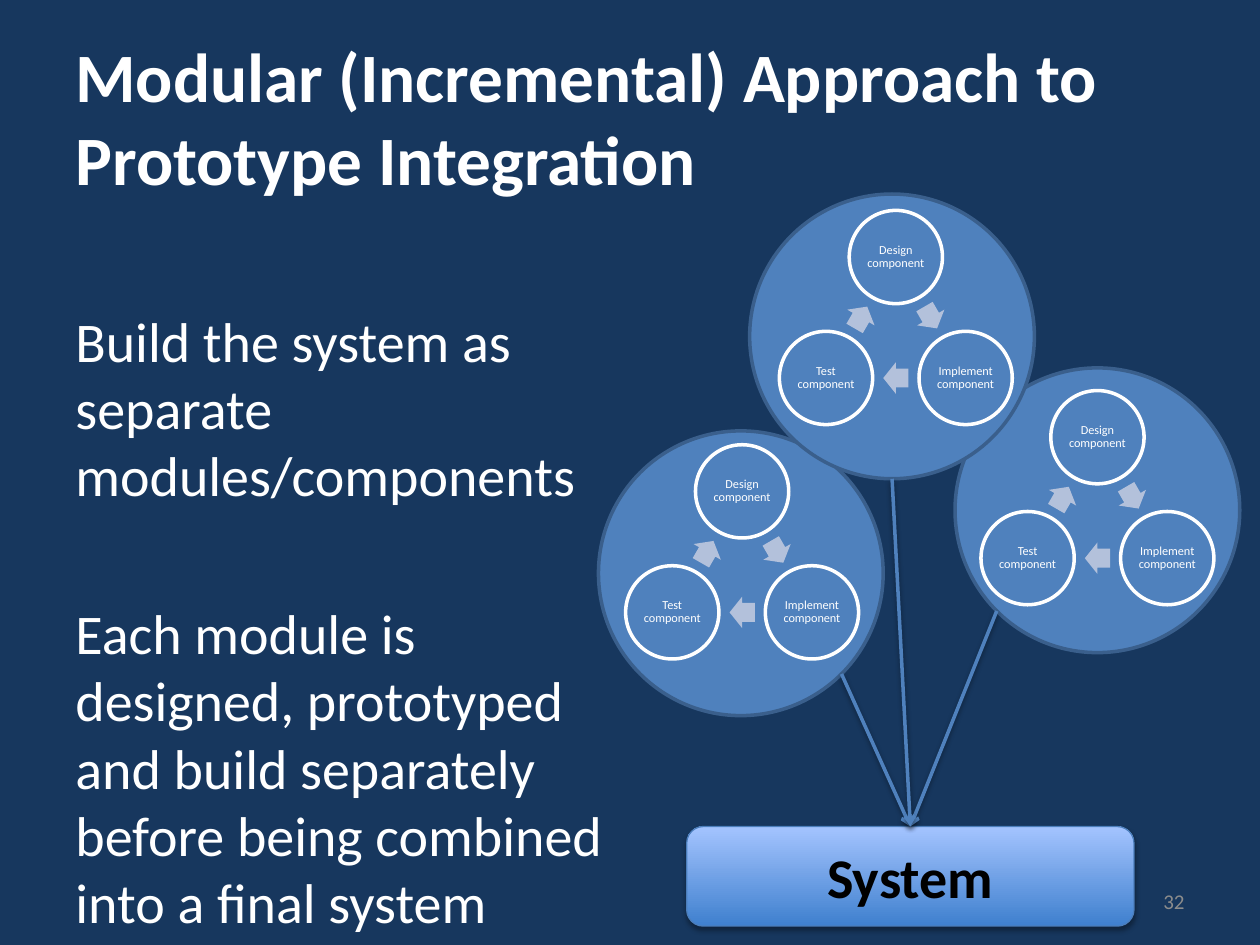
from math import cos, sin, radians
from lxml.etree import SubElement
from pptx import Presentation
from pptx.dml.color import RGBColor
from pptx.enum.shapes import MSO_CONNECTOR, MSO_SHAPE
from pptx.enum.text import MSO_ANCHOR, PP_ALIGN
from pptx.oxml.ns import qn
from pptx.util import Inches, Pt

TITLE = "Modular (Incremental) Approach to Prototype Integration"
BODY = [
    "Build the system as separate modules/components",
    "Each module is designed, prototyped and build separately before being combined into a final system",
]
STEPS = ["Design component", "Implement component", "Test component"]
MODULES = [
    {"center": (5.88, 4.55), "cycle": (5.89, 4.54), "exit": 45},
    {"center": (8.71, 4.05), "cycle": (8.71, 4.11), "exit": 135},
    {"center": (7.08, 2.67), "cycle": (7.11, 2.68), "exit": 90},
]
MODULE_SIZE, STEP_SIZE, CYCLE_RADIUS = 2.26, 0.74, 0.64
BLUE, WHITE = "4F81BD", "FFFFFF"


def color(value):
    return RGBColor.from_string(value)


def polar(center, radius, angle):
    x, y = center
    return x + radius * cos(radians(angle)), y + radius * sin(radians(angle))


def write(box, text, size, fill=WHITE, bold=False, align=PP_ALIGN.LEFT,
          anchor=MSO_ANCHOR.MIDDLE, inset=None, top=None, gap=0, spacing=None):
    frame = box.text_frame
    frame.word_wrap = True
    frame.vertical_anchor = anchor
    if inset is not None:
        frame.margin_left = frame.margin_right = Inches(inset)
        frame.margin_top = frame.margin_bottom = Inches(inset)
    if top is not None:
        frame.margin_top = Inches(top)
    for index, line in enumerate([text] if isinstance(text, str) else text):
        para = frame.add_paragraph() if index else frame.paragraphs[0]
        para.alignment = align
        if index:
            para.space_before = Pt(gap)
        if spacing:
            para.line_spacing = spacing
        span = para.add_run()
        span.text = line
        span.font.name = "Calibri"
        span.font.size = Pt(size)
        span.font.bold = bold
        span.font.color.rgb = color(fill)


def add_text(page, area, text, size, **style):
    box = page.shapes.add_textbox(*map(Inches, area))
    write(box, text, size, **style)
    return box


def add_centered(page, kind, center, width, height, fill, line=None):
    x, y = center
    shape = page.shapes.add_shape(kind, *map(Inches, (x - width / 2, y - height / 2, width, height)))
    shape.shadow.inherit = False
    shape.fill.solid()
    shape.fill.fore_color.rgb = color(fill)
    if line:
        shape.line.color.rgb = color(line)
        shape.line.width = Pt(2)
    else:
        shape.line.fill.background()
    return shape


def add_shadow(shape, opacity, distance):
    properties = shape._element.spPr
    effects = properties.find(qn("a:effectLst"))
    if effects is None:
        effects = SubElement(properties, qn("a:effectLst"))
    shadow = SubElement(effects, qn("a:outerShdw"), blurRad=str(Pt(3.1)),
                        dist=str(Pt(distance)), dir="5400000", rotWithShape="0")
    black = SubElement(shadow, qn("a:srgbClr"), val="000000")
    SubElement(black, qn("a:alpha"), val=str(opacity * 1000))


def add_cycle(page, center):
    for index, step in enumerate(STEPS):
        angle = index * 120 - 90
        circle = add_centered(page, MSO_SHAPE.OVAL, polar(center, CYCLE_RADIUS, angle),
                              STEP_SIZE, STEP_SIZE, BLUE, WHITE)
        write(circle, step, 7, align=PP_ALIGN.CENTER, inset=0.01, spacing=0.9)
        arrow = add_centered(page, MSO_SHAPE.RIGHT_ARROW, polar(center, CYCLE_RADIUS / 2, angle + 60),
                             0.2, 0.25, "B3C1DB")
        arrow.adjustments[0] = 0.6
        arrow.rotation = angle + 150


def add_system(page):
    system = page.shapes.add_shape(MSO_SHAPE.ROUNDED_RECTANGLE, *map(Inches, (5.45, 6.56, 3.55, 0.79)))
    system.shadow.inherit = False
    system.fill.gradient()
    system.fill.gradient_angle = 90
    for stop, value in zip(system.fill.gradient_stops, ("3F80CE", "A4C4FF")):
        stop.color.rgb = color(value)
    for stop, position in zip(system.fill.gradient_stops, (0, 1)):
        stop.position = position
    system.line.color.rgb = color("4B7EBC")
    system.line.width = Pt(0.75)
    add_shadow(system, 35, 1.8)
    write(system, "System", 32, fill="000000", bold=True, align=PP_ALIGN.CENTER)
    return system


def add_link(page, start, target):
    x, y = map(Inches, start)
    link = page.shapes.add_connector(MSO_CONNECTOR.STRAIGHT, x, y, x, y)
    link.end_connect(target, 0)
    link.line.color.rgb = color(BLUE)
    link.line.width = Pt(2)
    SubElement(link.line._get_or_add_ln(), qn("a:tailEnd"), type="arrow")
    add_shadow(link, 38, 1.6)


def main():
    deck = Presentation()
    deck.slide_width, deck.slide_height = Inches(10), Inches(7.5)
    page = deck.slides.add_slide(deck.slide_layouts[6])
    page.background.fill.solid()
    page.background.fill.fore_color.rgb = color("17375E")

    for module in MODULES:
        add_centered(page, MSO_SHAPE.OVAL, module["center"], MODULE_SIZE, MODULE_SIZE, BLUE, "3A5F8C")
    add_text(page, (0.5, 0.3, 9, 1.25), TITLE, 39.6, bold=True)
    add_text(page, (7.17, 6.95, 2.33, 0.4), "32", 12, fill="8C8C8C", align=PP_ALIGN.RIGHT)
    system = add_system(page)
    add_text(page, (0.5, 1.75, 4.55, 5.6), BODY, 32, anchor=MSO_ANCHOR.TOP, top=0.68, gap=52)
    for module in MODULES:
        add_cycle(page, module["cycle"])
    for module in MODULES:
        add_link(page, polar(module["center"], MODULE_SIZE / 2, module["exit"]), system)
    deck.save("out.pptx")


if __name__ == "__main__":
    main()
